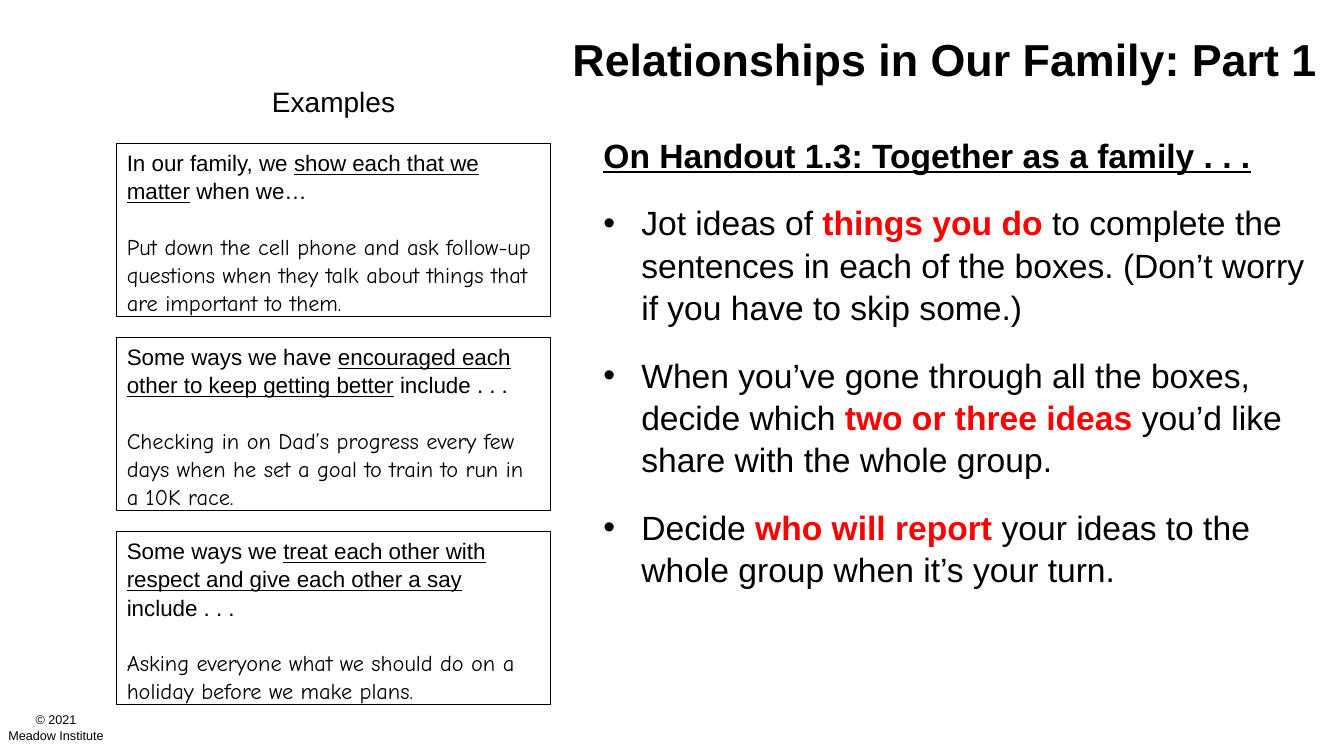
from lxml import etree
from pptx import Presentation
from pptx.dml.color import RGBColor
from pptx.enum.shapes import MSO_SHAPE
from pptx.enum.text import MSO_ANCHOR, PP_ALIGN
from pptx.oxml.ns import qn
from pptx.util import Pt

RECTANGLE = MSO_SHAPE.RECTANGLE
TOP, MIDDLE = MSO_ANCHOR.TOP, MSO_ANCHOR.MIDDLE
LEFT, CENTER = PP_ALIGN.LEFT, PP_ALIGN.CENTER
BLACK, WHITE, RED = "000000", "FFFFFF", "FF0000"
SANS, HANDWRITING = "Arial", "Comic Neue"
LINE_SPACING = 1.05
BULLET_INDENT = 27

EXAMPLES = [
    ("In our family, we ", "show each that we matter", " when we…", False,
     "Put down the cell phone and ask follow-up questions when they talk "
     "about things that are important to them."),
    ("Some ways we have ", "encouraged each other to keep getting better",
     " include . . .", False,
     "Checking in on Dad’s progress every few days when he set a goal to "
     "train to run in a 10K race."),
    ("Some ways we ", "treat each other with respect and give each other a say",
     "include . . .", True,
     "Asking everyone what we should do on a holiday before we make plans."),
]
STEPS = [
    ("Jot ideas of ", "things you do ",
     "to complete the sentences in each of the boxes. "
     "(Don’t worry if you have to skip some.)"),
    ("When you’ve gone through all the boxes, decide which ",
     "two or three ideas ", "you’d like share with the whole group."),
    ("Decide ", "who will report ",
     "your ideas to the whole group when it’s your turn."),
]


def color(value):
    return RGBColor.from_string(value)


def add_run(paragraph, text, size, font=SANS, fill=BLACK, bold=False, underline=False):
    run = paragraph.add_run()
    run.text = text
    run.font.size = Pt(size)
    run.font.name = font
    run.font.color.rgb = color(fill)
    run.font.bold = bold
    run.font.underline = underline


def style_paragraph(paragraph, align=LEFT, space_before=0):
    paragraph.alignment = align
    paragraph.line_spacing = LINE_SPACING
    paragraph.space_before = Pt(space_before)
    return paragraph


def add_bullet(paragraph):
    properties = paragraph._p.get_or_add_pPr()
    properties.set("marL", str(Pt(BULLET_INDENT)))
    properties.set("indent", str(-Pt(BULLET_INDENT)))
    bullet_color = etree.SubElement(properties, qn("a:buClr"))
    etree.SubElement(bullet_color, qn("a:srgbClr")).set("val", BLACK)
    etree.SubElement(properties, qn("a:buFont")).set("typeface", SANS)
    etree.SubElement(properties, qn("a:buChar")).set("char", "•")


def add_text_box(slide, left, top, width, height, anchor=TOP, wrap=True):
    shape = slide.shapes.add_textbox(Pt(left), Pt(top), Pt(width), Pt(height))
    frame = shape.text_frame
    frame.word_wrap = wrap
    frame.vertical_anchor = anchor
    return frame


def add_label(slide, bounds, lines, size, align=LEFT, anchor=TOP, bold=False, wrap=True):
    frame = add_text_box(slide, *bounds, anchor, wrap)
    for index, line in enumerate(lines):
        paragraph = frame.add_paragraph() if index else frame.paragraphs[0]
        add_run(style_paragraph(paragraph, align), line, size, bold=bold)
    return frame


def add_example(slide, top, opening, phrase, ending, breaks, answer):
    shape = slide.shapes.add_shape(RECTANGLE, Pt(83.5), Pt(top), Pt(310), Pt(123.8))
    shape.shadow.inherit = False
    shape.fill.solid()
    shape.fill.fore_color.rgb = color(WHITE)
    shape.line.color.rgb = color(BLACK)
    shape.line.width = Pt(0.75)
    frame = shape.text_frame
    frame.word_wrap = True
    frame.vertical_anchor = TOP
    prompt = style_paragraph(frame.paragraphs[0])
    add_run(prompt, opening, 16)
    add_run(prompt, phrase, 16, underline=True)
    if breaks:
        prompt.add_line_break()
    add_run(prompt, ending, 16)
    reply = style_paragraph(frame.add_paragraph(), space_before=19.3)
    add_run(reply, answer, 16, HANDWRITING)


def add_instructions(slide):
    frame = add_label(slide, (424, 91.4, 515.5, 376.6),
                      ["On Handout 1.3: Together as a family . . ."], 24, bold=True)
    frame.paragraphs[0].runs[0].font.underline = True
    for opening, emphasis, ending in STEPS:
        paragraph = style_paragraph(frame.add_paragraph(), space_before=18)
        add_bullet(paragraph)
        add_run(paragraph, opening, 24)
        add_run(paragraph, emphasis, 24, fill=RED, bold=True)
        add_run(paragraph, ending, 24)


def main():
    presentation = Presentation()
    presentation.slide_width = Pt(960)
    presentation.slide_height = Pt(540)
    slide = presentation.slides.add_slide(presentation.slide_layouts[6])
    footer = add_label(slide, (0, 504.7, 80, 28.8), ["© 2021", "Meadow Institute"],
                       9, CENTER, MIDDLE)
    footer.margin_left = footer.margin_right = 0
    add_label(slide, (401.8, 17.3, 558, 54), ["Relationships in Our Family: Part 1"],
              32, bold=True)
    add_instructions(slide)
    for index, example in enumerate(EXAMPLES):
        add_example(slide, 102.2 + 138.6 * index, *example)
    add_label(slide, (187.2, 55.4, 103, 31.7), ["Examples"], 20, wrap=False)
    presentation.save("out.pptx")


if __name__ == "__main__":
    main()
